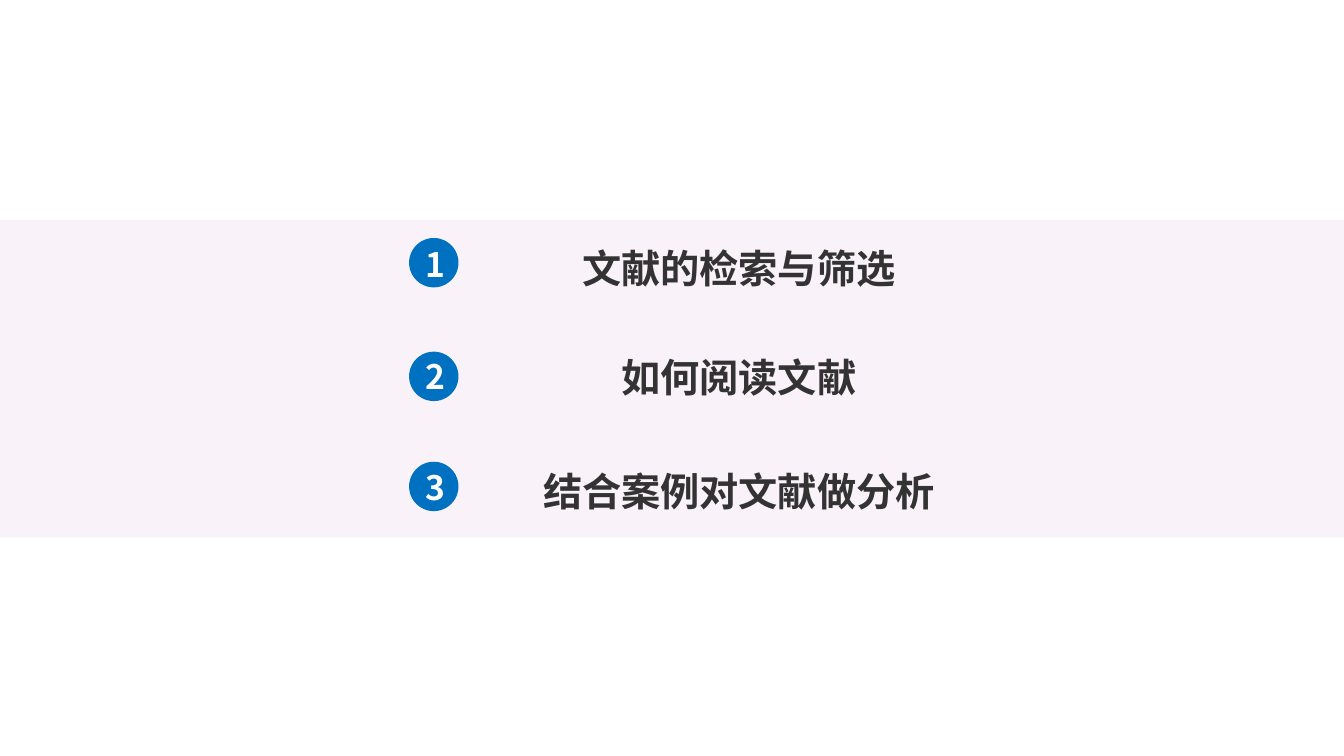
from dataclasses import dataclass

import lxml.etree
import pptx
import pptx.dml.color
import pptx.enum.shapes
import pptx.enum.text
import pptx.oxml.ns
import pptx.util
from pptx.shapes.autoshape import Shape
from pptx.slide import Slide


@dataclass(frozen=True)
class Theme:
    band: str = "F5EBF5"
    band_opacity: int = 60
    badge: str = "0070C0"
    number: str = "FFFFFF"
    title: str = "333333"
    number_size: float = 24
    title_size: float = 28
    number_font: str = "Noto Sans CJK SC"
    title_font: str = "Times New Roman"
    east_asian_font: str = "Noto Sans CJK SC"


@dataclass(frozen=True)
class Box:
    left: float
    top: float
    width: float
    height: float


@dataclass(frozen=True)
class TextStyle:
    font: str
    size: float
    color: str
    wrap: bool


@dataclass(frozen=True)
class AgendaItem:
    title: str
    badge_top: float
    number_top: float
    title_top: float


THEME = Theme()
NUMBER_STYLE = TextStyle(THEME.number_font, THEME.number_size, THEME.number, False)
TITLE_STYLE = TextStyle(THEME.title_font, THEME.title_size, THEME.title, True)
SLIDE_WIDTH = 960
SLIDE_HEIGHT = 540
AGENDA = [
    AgendaItem("文献的检索与筛选", 170, 170.6, 170.6),
    AgendaItem("如何阅读文献", 251.2, 250.6, 248.4),
    AgendaItem("结合案例对文献做分析", 329.8, 329.8, 329.8),
]


def add_filled_shape(
    slide: Slide,
    kind: pptx.enum.shapes.MSO_SHAPE,
    box: Box,
    color: str,
    opacity: int = 100,
) -> Shape:
    shape = slide.shapes.add_shape(
        kind,
        pptx.util.Pt(box.left),
        pptx.util.Pt(box.top),
        pptx.util.Pt(box.width),
        pptx.util.Pt(box.height),
    )
    shape.shadow.inherit = False
    shape.line.fill.background()
    shape.fill.solid()
    shape.fill.fore_color.rgb = pptx.dml.color.RGBColor.from_string(color)
    if opacity < 100:
        color_element = shape.element.spPr.find(
            f"{pptx.oxml.ns.qn('a:solidFill')}/{pptx.oxml.ns.qn('a:srgbClr')}"
        )
        lxml.etree.SubElement(
            color_element, pptx.oxml.ns.qn("a:alpha"), val=str(opacity * 1000)
        )
    return shape


def add_label(slide: Slide, text: str, box: Box, style: TextStyle) -> Shape:
    shape = slide.shapes.add_textbox(
        pptx.util.Pt(box.left),
        pptx.util.Pt(box.top),
        pptx.util.Pt(box.width),
        pptx.util.Pt(box.height),
    )
    text_frame = shape.text_frame
    text_frame.word_wrap = style.wrap
    text_frame.vertical_anchor = pptx.enum.text.MSO_ANCHOR.MIDDLE
    text_frame.text = text
    paragraph = text_frame.paragraphs[0]
    paragraph.alignment = pptx.enum.text.PP_ALIGN.CENTER
    run = paragraph.runs[0]
    run.font.name = style.font
    run.font.size = pptx.util.Pt(style.size)
    run.font.bold = True
    run.font.color.rgb = pptx.dml.color.RGBColor.from_string(style.color)
    lxml.etree.SubElement(
        run._r.get_or_add_rPr(),
        pptx.oxml.ns.qn("a:ea"),
        typeface=THEME.east_asian_font,
    )
    return shape


def add_agenda_item(slide: Slide, number: int, item: AgendaItem) -> None:
    add_filled_shape(
        slide,
        pptx.enum.shapes.MSO_SHAPE.OVAL,
        Box(292.2, item.badge_top, 35.3, 35.3),
        THEME.badge,
    )
    add_label(slide, str(number), Box(296.6, item.number_top, 26.6, 36), NUMBER_STYLE)
    add_label(slide, item.title, Box(327.6, item.title_top, 400.3, 41), TITLE_STYLE)


def main() -> None:
    presentation = pptx.Presentation()
    presentation.slide_width = pptx.util.Pt(SLIDE_WIDTH)
    presentation.slide_height = pptx.util.Pt(SLIDE_HEIGHT)
    slide = presentation.slides.add_slide(presentation.slide_layouts[6])
    add_filled_shape(
        slide,
        pptx.enum.shapes.MSO_SHAPE.RECTANGLE,
        Box(0, 157, SLIDE_WIDTH, 226.8),
        THEME.band,
        THEME.band_opacity,
    )
    for number, item in enumerate(AGENDA, start=1):
        add_agenda_item(slide, number, item)
    presentation.save("out.pptx")


if __name__ == "__main__":
    main()
